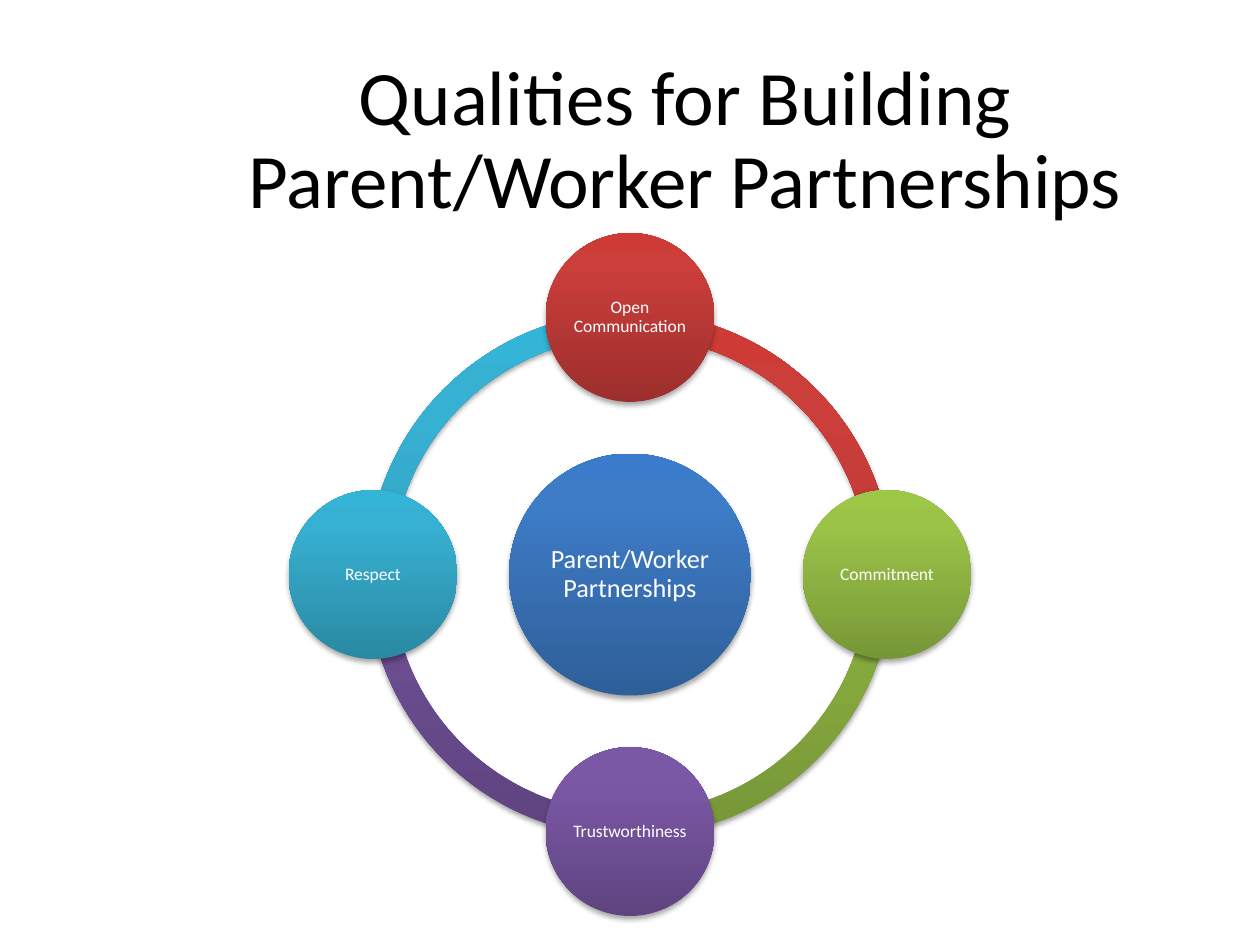
from copy import deepcopy
from math import cos, radians, sin

from lxml.etree import SubElement
from pptx import Presentation
from pptx.dml.color import RGBColor
from pptx.enum.shapes import MSO_SHAPE
from pptx.enum.text import MSO_ANCHOR, PP_ALIGN
from pptx.oxml.ns import qn
from pptx.util import Inches, Pt

COLORS = {
    "title": "000000",
    "label": "FFFFFF",
    "shadow": "000000",
    "blue": ("2F5F99", "3D7CC7", "3A7CCB"),
    "red": ("9C2F2D", "CB3E3A", "CE3B37"),
    "green": ("779737", "9BC348", "9DC746"),
    "purple": ("5F4480", "7B58A6", "7C57A8"),
    "teal": ("2A88A2", "37B1D2", "34B4D6"),
}
GRADIENT_POSITIONS = (0, 0.8, 1)
QUALITIES = (
    ("Open Communication", "red", 270),
    ("Commitment", "green", 0),
    ("Trustworthiness", "purple", 90),
    ("Respect", "teal", 180),
)
ANGLE_UNIT = 0.6
RING_THICKNESS = 0.046


def write_text(shape, text, size, color, margin=None):
    frame = shape.text_frame
    frame.word_wrap = True
    frame.vertical_anchor = MSO_ANCHOR.MIDDLE
    if margin is not None:
        frame.margin_left = frame.margin_right = Inches(margin)
        frame.margin_top = frame.margin_bottom = Inches(margin)
    paragraph = frame.paragraphs[0]
    paragraph.text = text
    paragraph.alignment = PP_ALIGN.CENTER
    paragraph.line_spacing = 0.9
    paragraph.font.name = "Calibri"
    paragraph.font.size = Pt(size)
    paragraph.font.color.rgb = RGBColor.from_string(COLORS[color])


def apply_gradient(shape, color):
    shape.fill.gradient()
    shape.fill.gradient_angle = 90
    stop_list = shape._element.spPr.find(qn("a:gradFill")).find(qn("a:gsLst"))
    stop_list.append(deepcopy(stop_list[0]))
    for stop, position, value in zip(
        shape.fill.gradient_stops, GRADIENT_POSITIONS, COLORS[color]
    ):
        stop.position = position
        stop.color.rgb = RGBColor.from_string(value)


def apply_shadow(shape):
    shape.shadow.inherit = False
    effects = shape._element.spPr.find(qn("a:effectLst"))
    shadow = SubElement(
        effects, qn("a:outerShdw"), blurRad=str(Pt(3.1)), dist=str(Pt(1.8)),
        dir="5400000", rotWithShape="0",
    )
    shadow_color = SubElement(shadow, qn("a:srgbClr"), val=COLORS["shadow"])
    SubElement(shadow_color, qn("a:alpha"), val="35000")


def add_round_shape(slide, kind, center_x, center_y, diameter, color):
    shape = slide.shapes.add_shape(
        kind, Inches(center_x - diameter / 2), Inches(center_y - diameter / 2),
        Inches(diameter), Inches(diameter),
    )
    apply_gradient(shape, color)
    shape.line.fill.background()
    apply_shadow(shape)
    return shape


def add_title(slide, left, top, width, height):
    title = slide.shapes.add_textbox(
        Inches(left), Inches(top), Inches(width), Inches(height)
    )
    write_text(
        title, "Qualities for Building\vParent/Worker Partnerships",
        size=44, color="title",
    )


def add_radial_cycle(slide, left, top, size):
    center_x, center_y = left + size / 2, top + size / 2
    node_diameter, hub_diameter, ring_diameter = 1.34, 1.92, 4.17
    orbit = (size - node_diameter) / 2

    for _, color, angle in reversed(QUALITIES):
        arc = add_round_shape(
            slide, MSO_SHAPE.BLOCK_ARC, center_x, center_y, ring_diameter, color
        )
        arc.adjustments[0] = angle * ANGLE_UNIT
        arc.adjustments[1] = (angle + 90) % 360 * ANGLE_UNIT
        arc.adjustments[2] = RING_THICKNESS

    hub = add_round_shape(
        slide, MSO_SHAPE.OVAL, center_x, center_y, hub_diameter, "blue"
    )
    write_text(
        hub, "Parent/Worker Partnerships", size=15, color="label", margin=0.02
    )

    for text, color, angle in QUALITIES:
        node = add_round_shape(
            slide, MSO_SHAPE.OVAL,
            center_x + orbit * cos(radians(angle)),
            center_y + orbit * sin(radians(angle)),
            node_diameter, color,
        )
        write_text(node, text, size=10, color="label", margin=0.01)


def main():
    presentation = Presentation()
    presentation.slide_width = Inches(10)
    presentation.slide_height = Inches(7.5)
    slide = presentation.slides.add_slide(presentation.slide_layouts[6])
    add_title(slide, 1.57, 0.4, 7.74, 1.45)
    add_radial_cycle(slide, 2.29, 1.85, 5.42)
    presentation.save("out.pptx")


if __name__ == "__main__":
    main()
